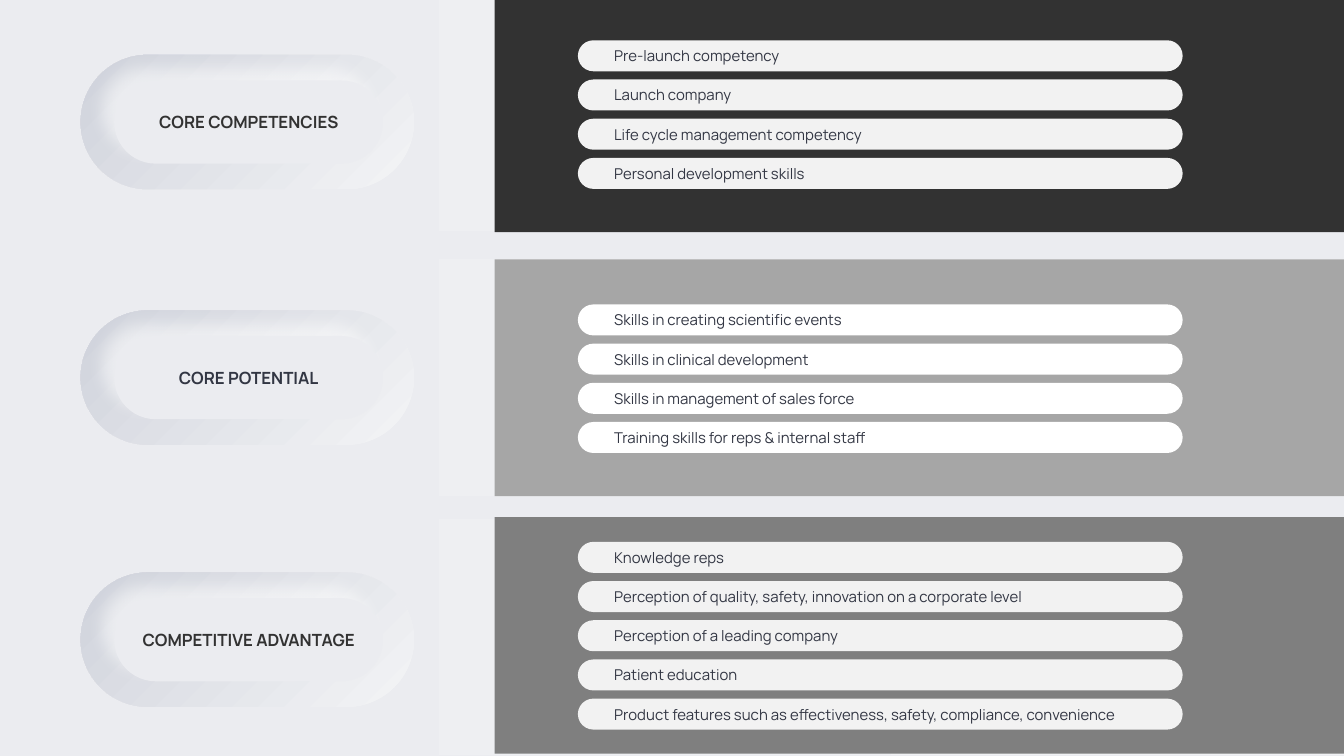
from lxml import etree
from pptx import Presentation
from pptx.dml.color import RGBColor
from pptx.enum.shapes import MSO_SHAPE as Shape
from pptx.enum.text import MSO_ANCHOR as Anchor, PP_ALIGN as Align
from pptx.oxml.ns import qn
from pptx.util import Pt

WIDTH, HEIGHT = 720, 405
BAND_HEIGHT = 126.8
PILL_STEP = 21


def rgb(value):
    return RGBColor.from_string(value)


class CompetencySlide:
    font = "Manrope"
    surface = "EBECF0"
    ink = "323643"

    def __init__(self, deck):
        self.slide = deck.slides.add_slide(deck.slide_layouts[6])
        background = self.slide.background.fill
        background.solid()
        background.fore_color.rgb = rgb(self.surface)

    def box(self, left, top, width, height, fill, kind=Shape.RECTANGLE, angle=0):
        """Add a shape; fill is one colour, or a pair for a gradient."""
        shape = self.slide.shapes.add_shape(
            kind, Pt(left), Pt(top), Pt(width), Pt(height))
        shape.shadow.inherit = False
        shape.line.fill.background()
        if isinstance(fill, str):
            shape.fill.solid()
            shape.fill.fore_color.rgb = rgb(fill)
        else:
            shape.fill.gradient()
            shape.fill.gradient_angle = angle
            for stop, color in zip(shape.fill.gradient_stops, fill):
                stop.color.rgb = rgb(color)
        return shape

    def rounded(self, left, top, width, height, fill, angle=0):
        shape = self.box(left, top, width, height, fill,
                         Shape.ROUNDED_RECTANGLE, angle)
        shape.adjustments[0] = 0.5
        return shape

    def label(self, shape, text, size, color, align, margins, bold=False):
        frame = shape.text_frame
        frame.word_wrap = True
        frame.vertical_anchor = Anchor.MIDDLE
        (frame.margin_left, frame.margin_top,
         frame.margin_right, frame.margin_bottom) = map(Pt, margins)
        paragraph = frame.paragraphs[0]
        paragraph.text = text
        paragraph.alignment = align
        font = paragraph.font
        font.name, font.size, font.bold = self.font, Pt(size), bold
        font.color.rgb = rgb(color)

    def glow(self, shape):
        """Cast a soft white shadow towards the top left."""
        effects = shape._element.spPr.find(qn("a:effectLst"))
        shadow = etree.SubElement(
            effects, qn("a:outerShdw"), blurRad=str(Pt(9)), dist=str(Pt(9)),
            dir=str(225 * 60000), algn="ctr", rotWithShape="0")
        white = etree.SubElement(shadow, qn("a:srgbClr"), val="FFFFFF")
        etree.SubElement(white, qn("a:alpha"), val="56000")

    def band(self, top, panel_top, panel_color):
        self.box(-7.2, top, WIDTH + 7.2, BAND_HEIGHT,
                 ("F1F2F4", self.surface), angle=180)
        self.box(265, panel_top, WIDTH - 265, BAND_HEIGHT, panel_color)

    def capsule(self, top, title, color):
        self.rounded(43.2, top, 178.6, 72, ("F3F4F6", "CFD2DB"), angle=135)
        face = self.rounded(61.2, top + 13.7, 144, 44.6, self.surface)
        self.glow(face)
        self.label(face, title, 9, color, Align.CENTER, (5, 2.5, 5, 2.5), True)

    def pills(self, top, color, skills):
        for row, skill in enumerate(skills):
            pill = self.rounded(309.6, top + row * PILL_STEP, 324, 16.6, color)
            self.label(pill, skill, 8, self.ink, Align.LEFT, (17, 0, 0, 0))


# band top, panel top, panel colour; capsule top, title, title colour;
# first pill top, pill colour, skills
SECTIONS = [
    ((-2.9, -2.4, "323232"),
     (29.4, "CORE COMPETENCIES", "323232"),
     (21.6, "F2F2F2", [
         "Pre-launch competency",
         "Launch company",
         "Life cycle management competency",
         "Personal development skills"])),
    ((139, 139, "A6A6A6"),
     (166.3, "CORE POTENTIAL", "323643"),
     (163.1, "FFFFFF", [
         "Skills in creating scientific events",
         "Skills in clinical development",
         "Skills in management of sales force",
         "Training skills for reps & internal staff"])),
    ((277.8, 277, "7F7F7F"),
     (306.7, "COMPETITIVE ADVANTAGE", "323232"),
     (290.3, "F2F2F2", [
         "Knowledge reps",
         "Perception of quality, safety, innovation on a corporate level",
         "Perception of a leading company",
         "Patient education",
         "Product features such as effectiveness, safety, compliance, convenience"])),
]


def main():
    deck = Presentation()
    deck.slide_width, deck.slide_height = Pt(WIDTH), Pt(HEIGHT)
    page = CompetencySlide(deck)

    # Each section: background band, title capsule, list of skills
    for band, capsule, pills in SECTIONS:
        page.band(*band)
        page.capsule(*capsule)
        page.pills(*pills)

    deck.save("out.pptx")


if __name__ == "__main__":
    main()
